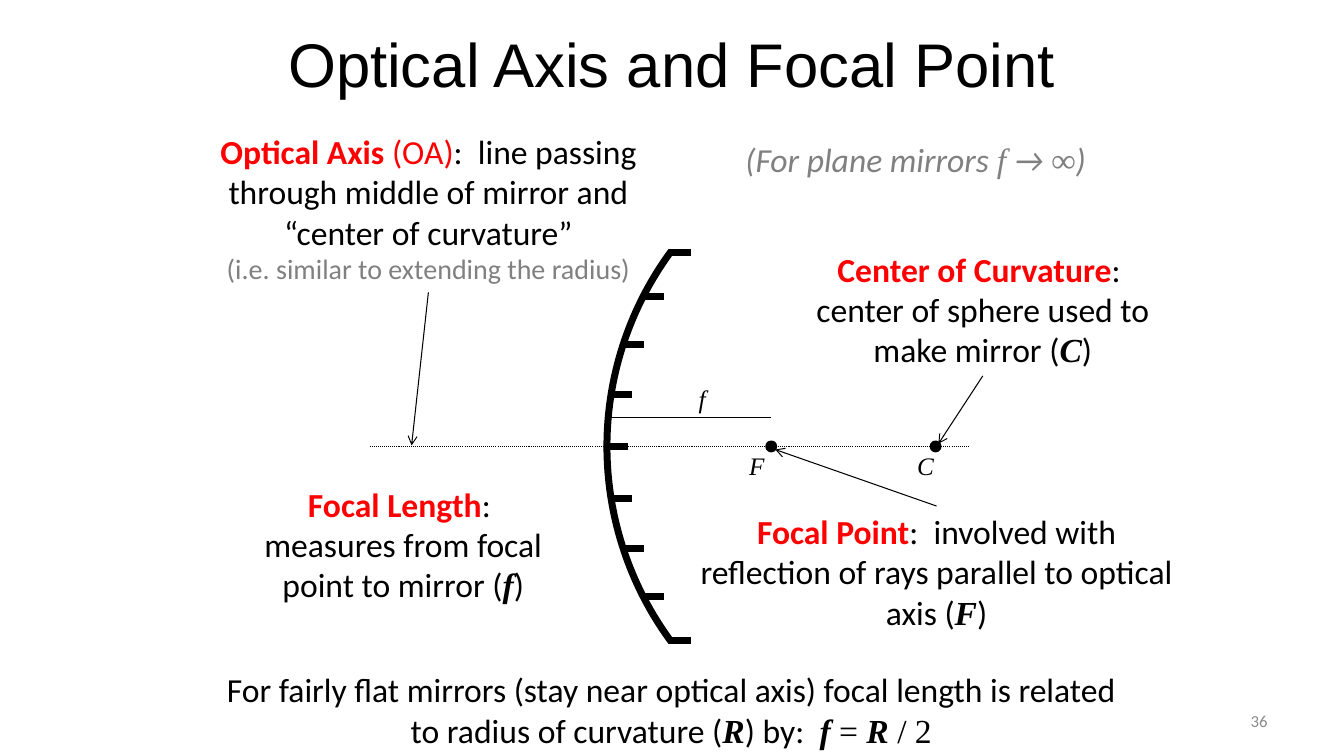
from dataclasses import dataclass
from math import cos, radians, sin
from lxml.etree import SubElement
from pptx import Presentation
from pptx.dml.color import RGBColor as RGB
from pptx.enum.dml import MSO_LINE as Dash
from pptx.enum.shapes import MSO_CONNECTOR as Conn, MSO_SHAPE as Shape
from pptx.enum.text import MSO_ANCHOR as Anchor, PP_ALIGN as Align
from pptx.oxml.ns import qn
from pptx.util import Pt


@dataclass(frozen=True)
class Theme:
    ink = RGB(0, 0, 0)
    red = RGB(255, 0, 0)
    gray = RGB(128, 128, 128)
    pale = RGB(140, 140, 140)
    title, body, small, label, page = 44, 24, 20, 18, 12
    head, sans, math = "Arial", "Calibri", "Times New Roman"
    thin, thick, ring = 0.75, 5, 2


look = Theme()
styles = {
    "text": (look.sans, look.ink, False, False),
    "key": (look.sans, look.red, True, False),
    "red": (look.sans, look.red, False, False),
    "side": (look.sans, look.gray, False, False),
    "aside": (look.sans, look.gray, False, True),
    "limit": (look.math, look.gray, False, True),
    "sign": (look.math, look.ink, False, False),
    "var": (look.math, look.ink, True, True),
    "label": (look.math, look.ink, False, True),
    "slant": (look.math, look.ink, False, True),
    "page": (look.sans, look.pale, False, False),
}

deck = Presentation()
deck.slide_width, deck.slide_height = Pt(960), Pt(540)
slide = deck.slides.add_slide(deck.slide_layouts[5])
shapes = slide.shapes


def write(box, *paras, align=Align.CENTER, anchor=Anchor.TOP):
    frame = shapes.add_textbox(*map(Pt, box)).text_frame
    frame.word_wrap = True
    frame.vertical_anchor = anchor
    for i, (size, *runs) in enumerate(paras):
        para = frame.add_paragraph() if i else frame.paragraphs[0]
        para.alignment = align
        para.font.size = Pt(size)
        same = len(runs) == 1
        for style, text in runs:
            run = para.add_run()
            run.text = text
            font = para.font if same else run.font
            font.name, font.color.rgb, font.bold, font.italic = styles[style]


def draw(start, end, width=look.thin, arrow=False, dash=None):
    line = shapes.add_connector(Conn.STRAIGHT, *map(Pt, (*start, *end)))
    line.line.color.rgb = look.ink
    line.line.width = Pt(width)
    if dash:
        line.line.dash_style = dash
    props = line.element.spPr
    if arrow:
        SubElement(props.find(qn("a:ln")), qn("a:tailEnd"), type="arrow")
    SubElement(props, qn("a:effectLst"))


title = shapes.title
title.left, title.top, title.width, title.height = map(Pt, (156, 0, 648, 90))
title.text_frame.text = "Optical Axis and Focal Point"
para = title.text_frame.paragraphs[0]
para.alignment = Align.CENTER
para.font.name, para.font.size = look.head, Pt(look.title)
para.font.color.rgb = look.ink

write((132, 90, 348, 118.8),
      (look.body, ("key", "Optical Axis "), ("red", "(OA)"),
       ("text", ":  line passing through middle of mirror and “center of curvature”")),
      (look.small, ("side", "(i.e. similar to extending the radius)")))
write((468, 96, 372, 36.4),
      (look.body, ("aside", "(For plane mirrors "), ("limit", "f"),
       ("aside", " → "), ("limit", "∞"), ("aside", ")")))

terms = [
    ((564, 174, 276, 94.5), "Center of Curvature",
     ":  center of sphere used to make mirror (", "C"),
    ((486, 361.5, 366, 94.5), "Focal Point",
     ":  involved with reflection of rays parallel to optical axis (", "F"),
    ((168, 342, 240, 94.5), "Focal Length",
     ":  measures from focal point to mirror (", "f"),
]
for box, term, text, sign in terms:
    write(box, (look.body, ("key", term), ("text", text), ("var", sign), ("text", ")")))

write((152.5, 474.5, 654, 65.5),
      (look.body,
       ("text", "For fairly flat mirrors (stay near optical axis) focal length is related to radius of curvature ("),
       ("var", "R"), ("text", ") by:  "), ("var", "f "), ("sign", "= "),
       ("var", "R "), ("sign", "/ 2")))

mid, axis, radius = 668.3, 318.9, 234.8
focus, edge = mid - radius / 2, mid - radius
arc = shapes.add_shape(Shape.ARC, Pt(edge), Pt(axis - radius),
                       Pt(2 * radius), Pt(2 * radius))
arc.rotation = 180
arc.adjustments[0], arc.adjustments[1] = 194.11, 21.89
arc.fill.background()
arc.line.color.rgb = look.ink
arc.line.width = Pt(look.thick)
arc.shadow.inherit = False

reach, tick = 235.5, 15.8
for turn in range(-36, 37, 9):
    x = mid - reach * cos(radians(turn))
    y = axis + reach * sin(radians(turn))
    draw((x, y), (x + tick, y), look.thick)

draw((264, axis), (692, axis), dash=Dash.ROUND_DOT)
draw((edge, 298.2), (focus, 298.2))

size = 6.5
for x in (mid, focus):
    dot = shapes.add_shape(Shape.OVAL, Pt(x - size / 2), Pt(axis - size / 2),
                           Pt(size), Pt(size))
    dot.fill.solid()
    dot.fill.fore_color.rgb = dot.line.color.rgb = look.ink
    dot.line.width = Pt(look.ring)
    dot.shadow.inherit = False

for start, end in (((702, 268.5), (670.3, 317)),
                   ((306, 208.8), (294, 318.2)),
                   ((669, 361.5), (553.7, 321.1))):
    draw(start, end, arrow=True)

for text, x, y in (("C", 648, 318), ("F", 528, 318), ("f", 492, 270)):
    write((x, y, 18, 29), (look.label, ("label", text)), align=Align.LEFT)

write((688.5, 500.5, 224, 28.8), (look.page, ("page", "36")),
      align=Align.RIGHT, anchor=Anchor.MIDDLE)

deck.save("out.pptx")
